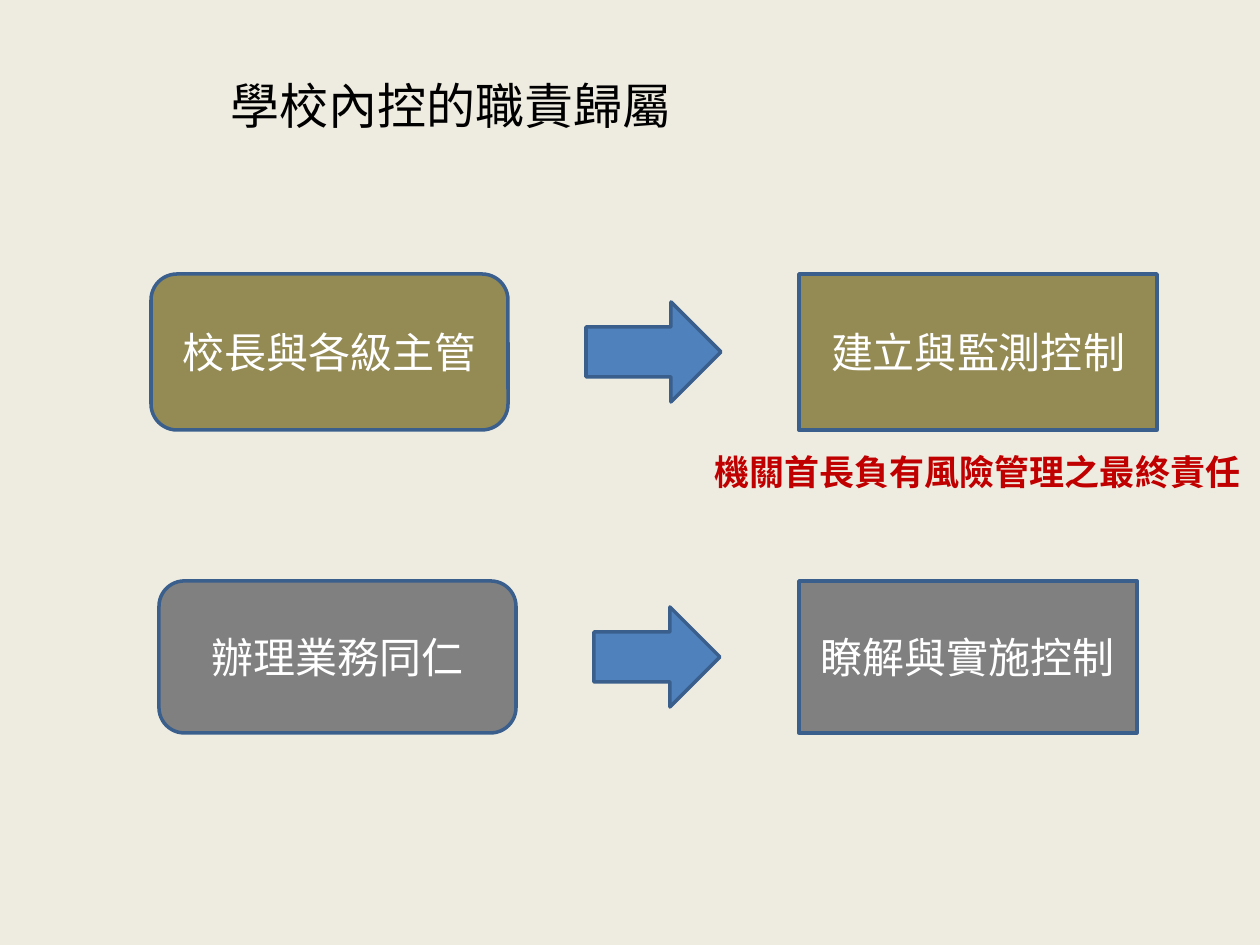
import dataclasses

import pptx
import pptx.dml.color
import pptx.enum.shapes
import pptx.enum.text
import pptx.util

EMU_PER_PX = 914400 / 126
SHAPES = pptx.enum.shapes.MSO_SHAPE
ALIGN = pptx.enum.text.PP_ALIGN
ANCHOR = pptx.enum.text.MSO_ANCHOR


@dataclasses.dataclass(frozen=True)
class Theme:
    font: str = "Arial"
    background: str = "EEECE1"
    title_color: str = "000000"
    label_color: str = "FFFFFF"
    note_color: str = "C00000"
    manager_fill: str = "948A54"
    staff_fill: str = "808080"
    arrow_fill: str = "4F81BD"
    outline: str = "3A5F8C"
    outline_width: int = 2
    title_size: int = 28
    label_size: int = 24
    note_size: int = 20


@dataclasses.dataclass(frozen=True)
class Box:
    left: int
    top: int
    width: int
    height: int

    def inner(self, left, top, width, height):
        return Box(self.left + left, self.top + top, width, height)

    def emu(self):
        return [round(length * EMU_PER_PX) for length in dataclasses.astuple(self)]


THEME = Theme()


def rgb(color):
    return pptx.dml.color.RGBColor.from_string(color)


def write(shape, text, size, color, align, bold=False):
    shape.text_frame.text = text
    paragraph = shape.text_frame.paragraphs[0]
    paragraph.alignment = align
    font = paragraph.runs[0].font
    font.name = THEME.font
    font.size = pptx.util.Pt(size)
    font.bold = bold
    font.color.rgb = rgb(color)


def add_outlined(slide, kind, box, fill):
    shape = slide.shapes.add_shape(kind, *box.emu())
    shape.shadow.inherit = False
    shape.fill.solid()
    shape.fill.fore_color.rgb = rgb(fill)
    shape.line.color.rgb = rgb(THEME.outline)
    shape.line.width = pptx.util.Pt(THEME.outline_width)
    return shape


def add_label_box(slide, kind, box, fill, text):
    shape = add_outlined(slide, kind, box, fill)
    shape.text_frame.vertical_anchor = ANCHOR.MIDDLE
    write(shape, text, THEME.label_size, THEME.label_color, ALIGN.CENTER)


def add_title(slide, box, text):
    title = slide.shapes.title
    title.left, title.top, title.width, title.height = box.emu()
    title.text_frame.vertical_anchor = ANCHOR.MIDDLE
    write(title, text, THEME.title_size, THEME.title_color, ALIGN.CENTER)


def add_duty_row(slide, box, fill, role, duty, duty_width, arrow_width):
    role_width, arrow_height = 357, 100
    duty_left = box.width - duty_width
    arrow_left = (role_width + duty_left - arrow_width) // 2
    arrow_top = (box.height - arrow_height) // 2
    add_label_box(slide, SHAPES.ROUNDED_RECTANGLE,
                  box.inner(0, 0, role_width, box.height), fill, role)
    add_label_box(slide, SHAPES.RECTANGLE,
                  box.inner(duty_left, 0, duty_width, box.height), fill, duty)
    add_outlined(slide, SHAPES.RIGHT_ARROW,
                 box.inner(arrow_left, arrow_top, arrow_width, arrow_height),
                 THEME.arrow_fill)


def add_note(slide, box, text):
    note = slide.shapes.add_textbox(*box.emu())
    note.text_frame.word_wrap = False
    note.text_frame.auto_size = pptx.enum.text.MSO_AUTO_SIZE.SHAPE_TO_FIT_TEXT
    write(note, text, THEME.note_size, THEME.note_color, ALIGN.LEFT, bold=True)


def main():
    presentation = pptx.Presentation()
    presentation.slide_width = pptx.util.Inches(10)
    presentation.slide_height = pptx.util.Inches(7.5)
    slide = presentation.slides.add_slide(presentation.slide_layouts[5])
    slide.background.fill.solid()
    slide.background.fill.fore_color.rgb = rgb(THEME.background)

    add_title(slide, Box(-116, 47, 1134, 116), "學校內控的職責歸屬")
    add_duty_row(slide, Box(151, 274, 1006, 156), THEME.manager_fill,
                 "校長與各級主管", "建立與監測控制", 358, 135)
    add_duty_row(slide, Box(159, 581, 978, 152), THEME.staff_fill,
                 "辦理業務同仁", "瞭解與實施控制", 338, 126)
    add_note(slide, Box(702, 444, 551, 55), "機關首長負有風險管理之最終責任")

    presentation.save("out.pptx")


if __name__ == "__main__":
    main()
